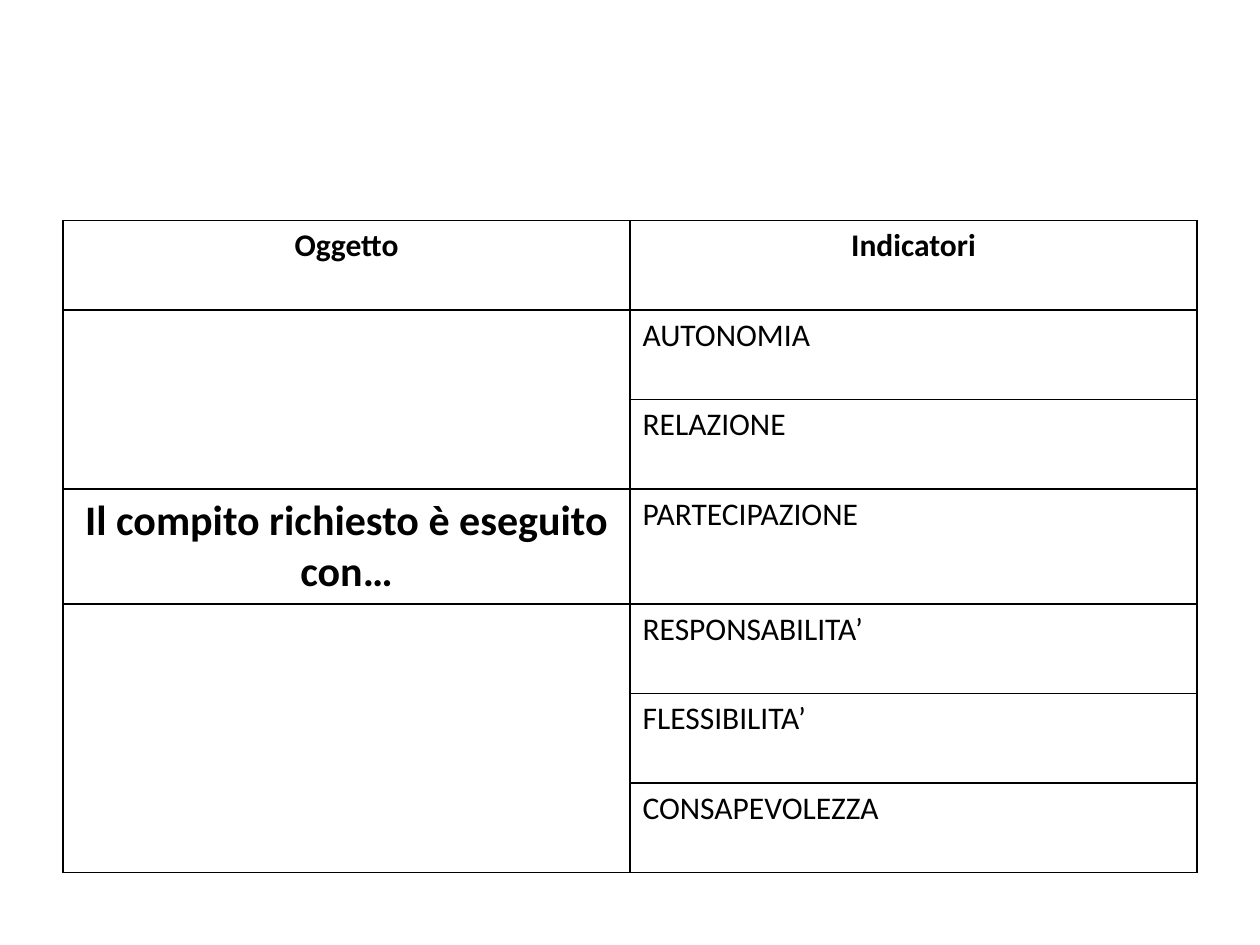
from lxml.etree import SubElement
from pptx import Presentation
from pptx.dml.color import RGBColor
from pptx.enum.text import PP_ALIGN
from pptx.oxml.ns import qn
from pptx.util import Inches, Pt

# Content: one (object, indicator) pair per row
ROWS = [
    ("Oggetto", "Indicatori"),
    ("", "AUTONOMIA"),
    ("", "RELAZIONE"),
    ("Il compito richiesto è eseguito con…", "PARTECIPAZIONE"),
    ("", "RESPONSABILITA’"),
    ("", "FLESSIBILITA’"),
    ("", "CONSAPEVOLEZZA"),
]
MERGES = [(1, 2), (4, 6)]  # first and last row in the left column
TASK = 3
FONT, INK, PAPER = "Calibri", "000000", "FFFFFF"
ROW_H = 0.71


def paint(target, color):
    target.solid()
    target.fore_color.rgb = RGBColor.from_string(color)


def border(cell):
    props = cell._tc.get_or_add_tcPr()
    for i, side in enumerate(("lnL", "lnR", "lnT", "lnB")):
        line = SubElement(props, qn("a:" + side), w=str(Pt(1)))
        fill = SubElement(line, qn("a:solidFill"))
        SubElement(fill, qn("a:srgbClr"), val=INK)
        props.remove(line)
        props.insert(i, line)  # borders come before the fill


def write(cell, text, size, bold):
    para = cell.text_frame.paragraphs[0]
    para.alignment = PP_ALIGN.CENTER if bold else PP_ALIGN.LEFT
    run = para.add_run()
    run.text = text
    font = run.font
    font.name, font.size, font.bold = FONT, Pt(size), bold
    paint(font.fill, INK)


# Slide
deck = Presentation()
deck.slide_width, deck.slide_height = Inches(10), Inches(7.5)
slide = deck.slides.add_slide(deck.slide_layouts[6])
paint(slide.background.fill, PAPER)

# Table; the task row grows to hold its two lines
table = slide.shapes.add_table(
    len(ROWS), 2, Inches(0.5), Inches(1.75), Inches(9), Inches(5.18)
).table
table.first_row = table.horz_banding = False
for row in table.rows:
    row.height = Inches(ROW_H)

# Cells
for r, pair in enumerate(ROWS):
    for c, text in enumerate(pair):
        cell = table.cell(r, c)
        paint(cell.fill, PAPER)
        border(cell)
        if text:
            size = 24 if (r, c) == (TASK, 0) else 18
            write(cell, text, size, r == 0 or c == 0)

# Merged left cells
for first, last in MERGES:
    table.cell(first, 0).merge(table.cell(last, 0))

deck.save("out.pptx")
